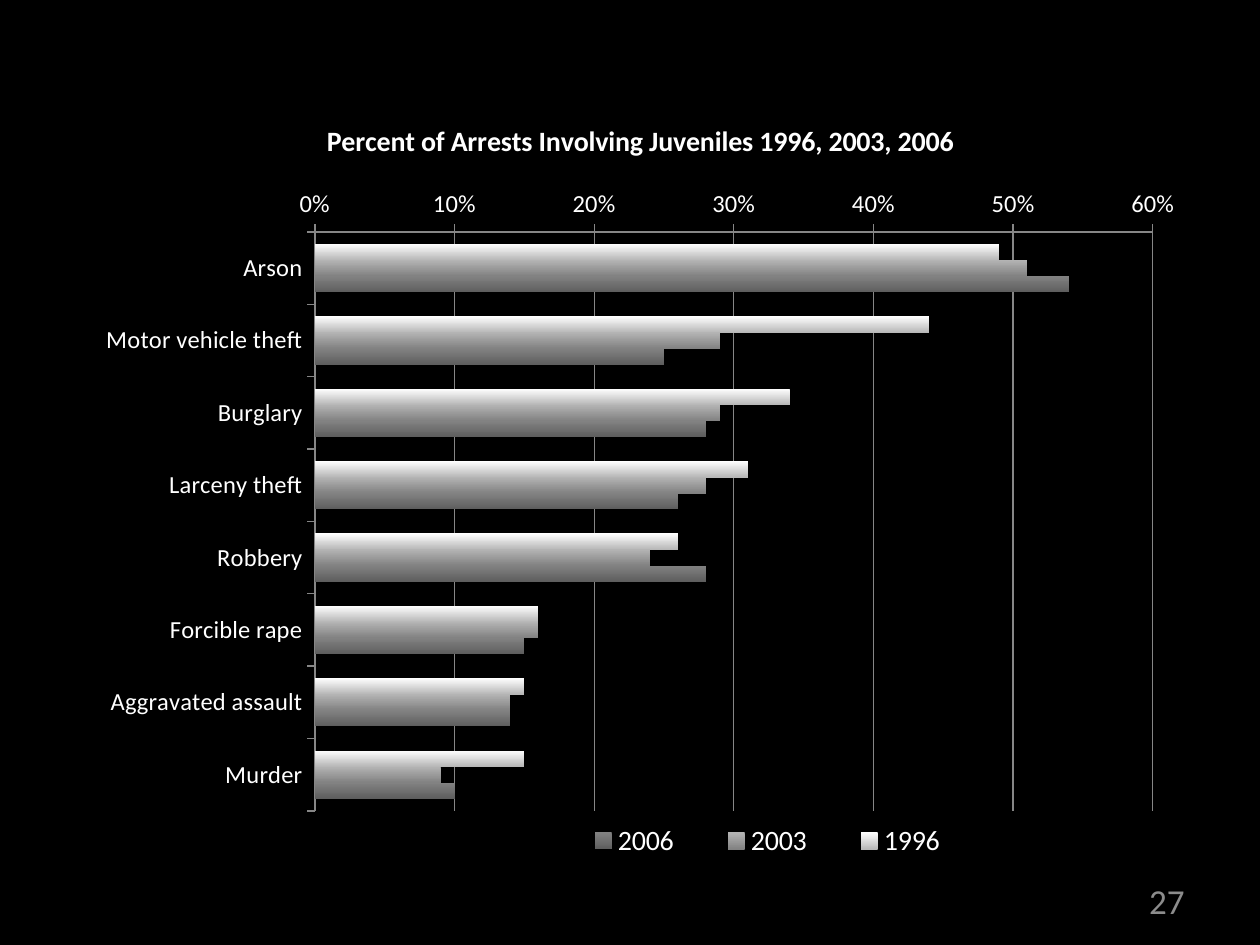
from pptx import Presentation, util as u
from pptx.chart.data import CategoryChartData
from pptx.dml.color import RGBColor
from pptx.enum import chart as ch, text
from pptx.oxml import parse_xml
from pptx.oxml.ns import nsdecls

BLACK = RGBColor(0, 0, 0)
WHITE = RGBColor(255, 255, 255)
GRAY = RGBColor(0x8C, 0x8C, 0x8C)
RULE = RGBColor(0x86, 0x86, 0x86)

TITLE = "Percent of Arrests Involving Juveniles 1996, 2003, 2006"
CRIMES = ["Arson", "Motor vehicle theft", "Burglary", "Larceny theft",
          "Robbery", "Forcible rape", "Aggravated assault", "Murder"]
# year, percent per crime, top and bottom colour of the bar
YEARS = [
    ("1996", [49, 44, 34, 31, 26, 16, 15, 15], "FFFFFF", "B8B8B8"),
    ("2003", [51, 29, 29, 28, 24, 16, 14, 9], "B4B4B4", "828282"),
    ("2006", [54, 25, 28, 26, 28, 15, 14, 10], "828282", "5E5E5E"),
]
# left, top, width, height in px
CHART = (84, 94, 1113, 788)
PLOT = (315, 232, 838, 579)
LEGEND = (550, 820, 435, 42)
NUMBER = (903, 876, 294, 50)


def px(n):
    return u.Emu(round(n * 914400 / 126))


def style(font, size, color=WHITE, bold=False):
    for key, val in dict(name="Calibri", size=u.Pt(size), bold=bold).items():
        setattr(font, key, val)
    font.color.rgb = color


def layout(box, target=""):
    """Layout element placing a slide box as fractions of the chart."""
    left, top, wide, high = CHART
    parts = dict(x=(box[0] - left) / wide, y=(box[1] - top) / high,
                 w=box[2] / wide, h=box[3] / high)
    modes = "".join(f'<c:{k}Mode val="edge"/>' for k in "xy")
    sizes = "".join(f'<c:{k} val="{v:.4f}"/>' for k, v in parts.items())
    return parse_xml(f'<c:layout {nsdecls("c")}><c:manualLayout>{target}'
                     f'{modes}{sizes}</c:manualLayout></c:layout>')


def place(node, new, index):
    for old in node.findall(new.tag):
        node.remove(old)
    node.insert(index, new)


def add_chart(slide):
    data = CategoryChartData(number_format="0%")
    data.categories = CRIMES
    for year, vals, *_ in YEARS:
        data.add_series(year, [v / 100 for v in vals])
    chart = slide.shapes.add_chart(ch.XL_CHART_TYPE.BAR_CLUSTERED,
                                   *map(px, CHART), data).chart
    style(chart.font, 10)

    chart.has_title = True
    frame = chart.chart_title.text_frame
    frame.text = TITLE
    style(frame.paragraphs[0].runs[0].font, 16, bold=True)
    chart.chart_title.include_in_layout = False

    plot = chart.plots[0]
    plot.gap_width, plot.overlap, plot.vary_by_categories = 150, 0, False
    for bars, (_, _, *tones) in zip(plot.series, YEARS):
        fill = bars.format.fill
        fill.gradient()
        fill.gradient_angle = 270
        for stop, tone in zip(fill.gradient_stops, tones):
            stop.color.rgb = RGBColor.from_string(tone)

    cats, vals = chart.category_axis, chart.value_axis
    cats.reverse_order = True
    vals.minimum_scale, vals.maximum_scale, vals.major_unit = 0, 0.6, 0.1
    vals.has_major_gridlines = True
    for axis in (cats, vals):
        axis.major_tick_mark = ch.XL_TICK_MARK.OUTSIDE
        style(axis.tick_labels.font, 14)
    vals.tick_labels.number_format = "0%"
    vals.tick_labels.number_format_is_linked = False
    for part in (cats, vals, vals.major_gridlines):
        part.format.line.color.rgb = RULE
        part.format.line.width = u.Pt(0.75)

    chart.has_legend = True
    legend = chart.legend
    legend.position = ch.XL_LEGEND_POSITION.BOTTOM
    legend.include_in_layout = False
    style(legend.font, 16)

    area = chart._chartSpace.chart.plotArea
    place(area, layout(PLOT, '<c:layoutTarget val="inner"/>'), 0)
    place(legend._element, layout(LEGEND), 1)


def add_number(slide, label):
    frame = slide.shapes.add_textbox(*map(px, NUMBER)).text_frame
    frame.word_wrap = True
    frame.vertical_anchor = text.MSO_ANCHOR.MIDDLE
    para = frame.paragraphs[0]
    para.alignment = text.PP_ALIGN.RIGHT
    run = para.add_run()
    run.text = label
    style(run.font, 20, GRAY)


def main():
    deck = Presentation()
    deck.slide_width, deck.slide_height = px(1260), px(945)
    slide = deck.slides.add_slide(deck.slide_layouts[6])
    slide.background.fill.solid()
    slide.background.fill.fore_color.rgb = BLACK
    add_chart(slide)
    add_number(slide, "27")
    deck.save("out.pptx")


if __name__ == "__main__":
    main()
